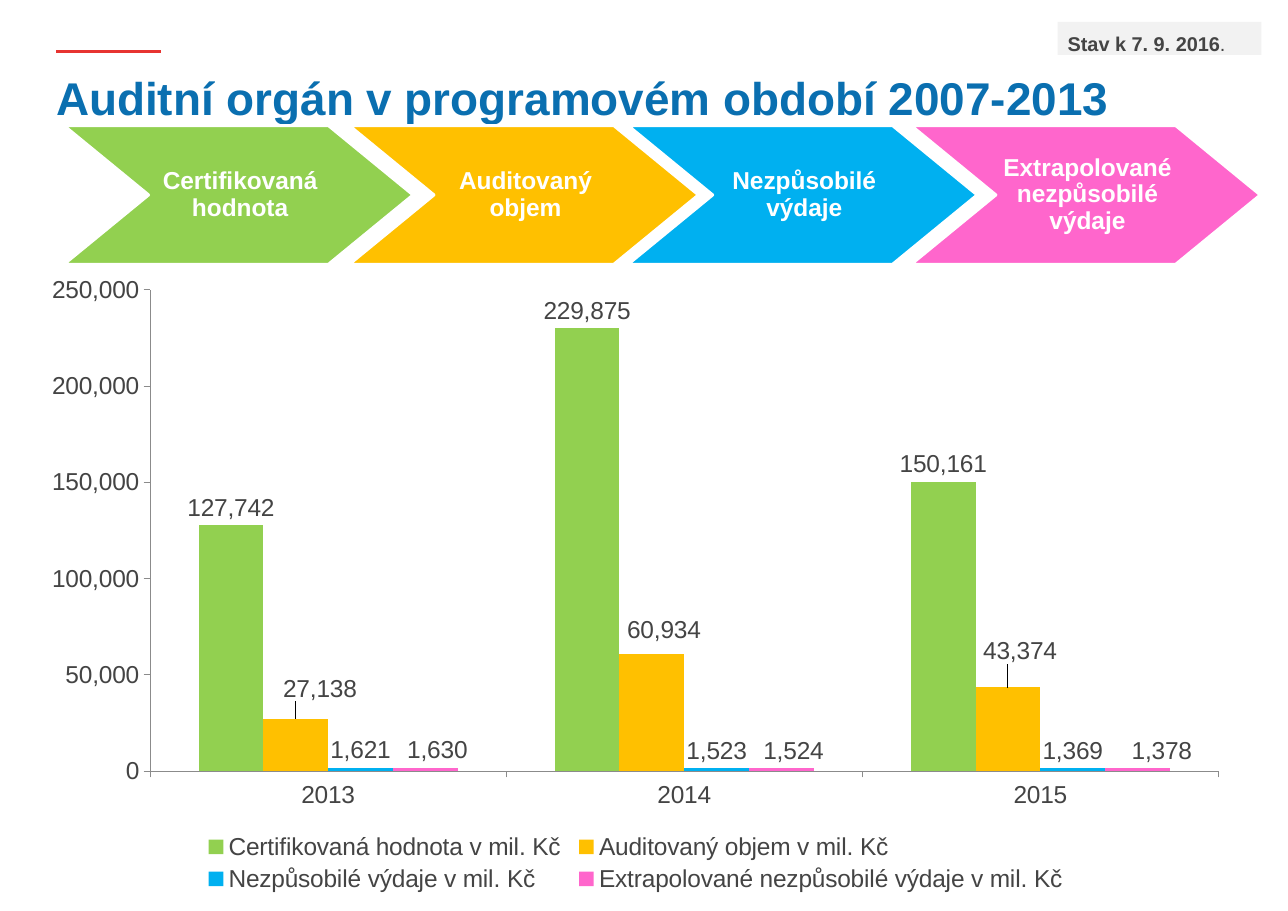
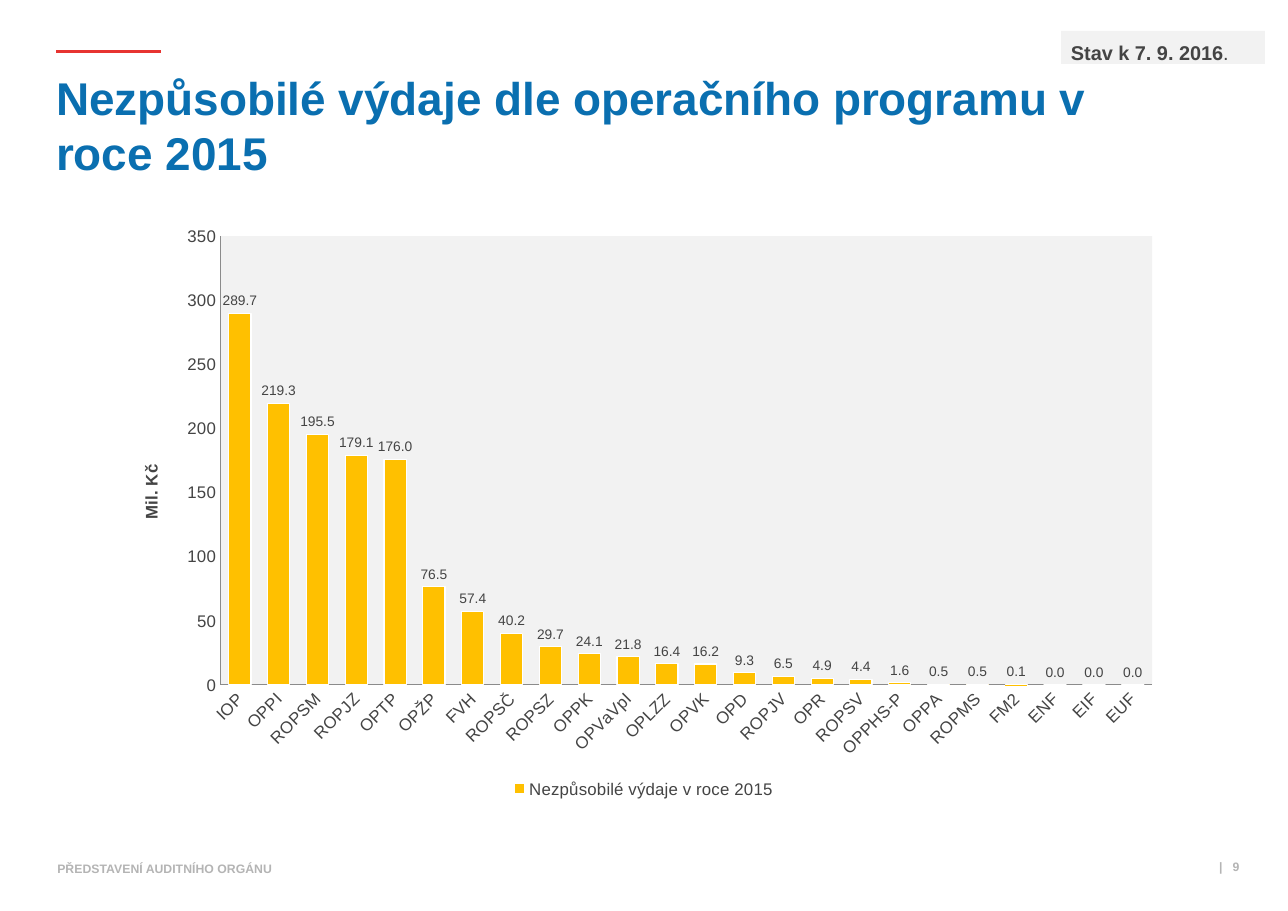
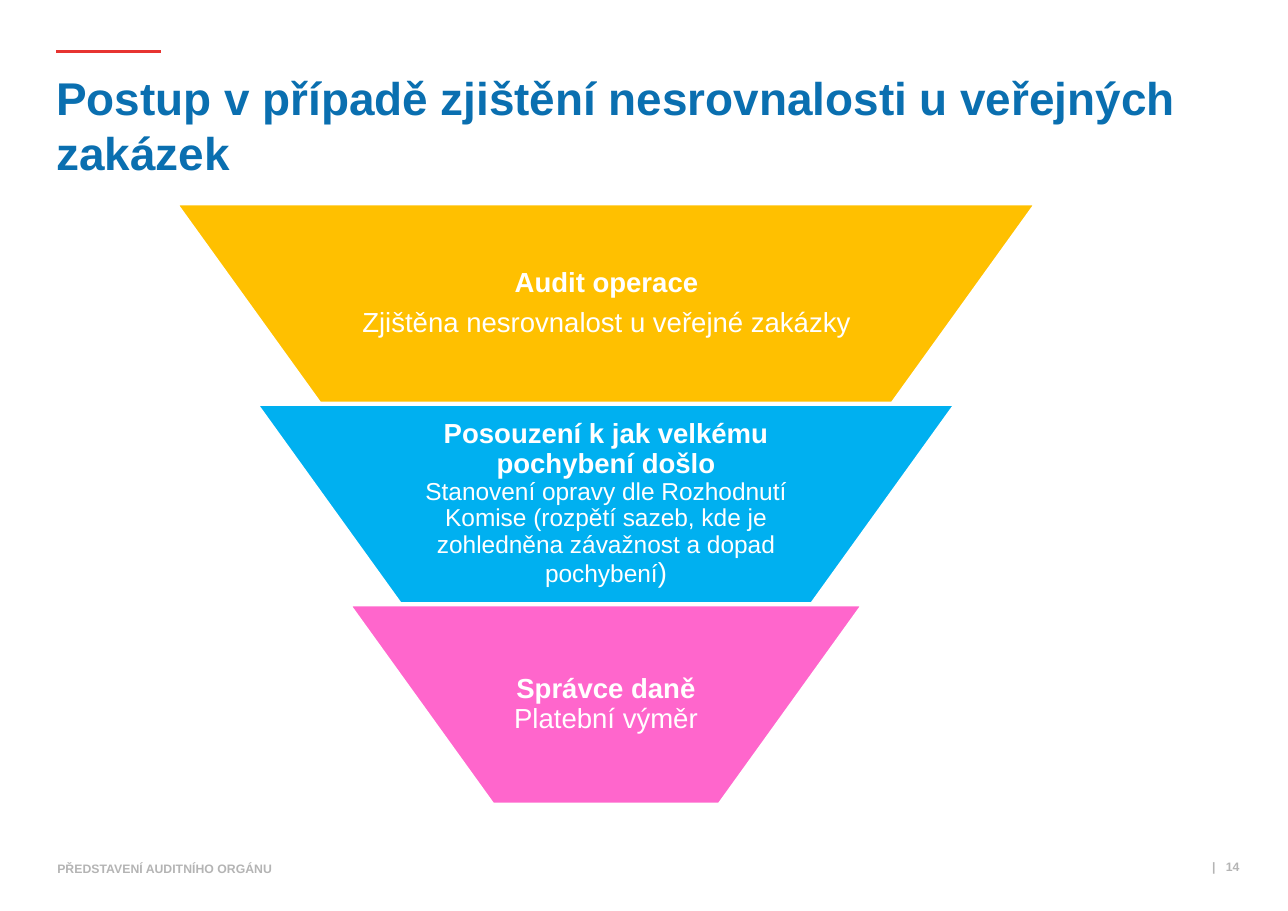
from dataclasses import dataclass
from typing import Any, NamedTuple, Optional

from lxml.etree import SubElement
from pptx import Presentation
from pptx.chart.data import CategoryChartData
from pptx.dml.color import RGBColor
from pptx.enum.chart import XL_CHART_TYPE as ChartType
from pptx.enum.chart import XL_LABEL_POSITION as LabelPosition
from pptx.enum.chart import XL_LEGEND_POSITION as LegendPosition
from pptx.enum.chart import XL_TICK_MARK as TickMark
from pptx.enum.shapes import MSO_CONNECTOR as Connector
from pptx.enum.shapes import MSO_SHAPE as Preset
from pptx.enum.text import MSO_ANCHOR as Anchor
from pptx.enum.text import PP_ALIGN as Align
from pptx.oxml import parse_xml
from pptx.oxml.ns import nsdecls, qn
from pptx.util import Pt

EMU_PER_PX = 9144
FONT = "Arial"
WHITE, TEXT, MUTED, PANEL, AXIS = "FFFFFF", "444444", "B4B4B4", "F2F2F2", "8B8B8B"
TITLE_BLUE, ACCENT_RED = "0A6FB0", "E73431"
GREEN, AMBER, SKY, PINK = "92D050", "FFC000", "00B0F0", "FF66CC"
DIAGRAM_PARAGRAPH = {"alignment": Align.CENTER, "line_spacing": 0.9, "space_after": Pt(7)}
INNER_PLOT = (0.1, 0.04, 0.88, 0.76)
NO_LEADER_LINES = (
    f"<c:extLst {nsdecls('c')}><c:ext uri=\"{{CE6537A1-D6FC-4f65-9D91-7224C49458BB}}\" "
    "xmlns:c15=\"http://schemas.microsoft.com/office/drawing/2012/chart\">"
    "<c15:showLeaderLines val=\"0\"/></c:ext></c:extLst>")


class Box(NamedTuple):
    left: int
    top: int
    width: int
    height: int


class Run(NamedTuple):
    text: str
    size: int
    color: str = WHITE
    bold: bool = False
    spacing: int = 0


class Step(NamedTuple):
    left: int
    label: str
    color: str


class Stage(NamedTuple):
    width: int
    text_width: int
    color: str
    paragraphs: list


class Measure(NamedTuple):
    name: str
    values: tuple
    color: str
    label_shifts: tuple = ()


@dataclass
class ColumnChart:
    box: Box
    categories: tuple
    measures: list
    size: int
    label_size: int
    label_format: str
    gap: int
    maximum: int
    step: int
    tick: Any
    legend_layout: Optional[tuple] = None
    axis_title: str = ""
    label_angle: int = 0
    plot_fill: str = ""
    outline: str = ""


def px(length: int) -> int:
    return length * EMU_PER_PX


def rgb(color: str) -> RGBColor:
    return RGBColor.from_string(color)


def apply(target: Any, values: dict) -> None:
    for name, value in values.items():
        setattr(target, name, value)


def style_font(font: Any, size: int, color: str, bold: bool = False) -> None:
    apply(font, {"name": FONT, "size": Pt(size), "bold": bold})
    font.color.rgb = rgb(color)


def set_line(line: Any, color: str, width: float) -> None:
    line.color.rgb = rgb(color)
    line.width = Pt(width)


def write(frame: Any, paragraphs: list, style: dict, anchor: Any = Anchor.TOP,
          margin: int = 0) -> None:
    apply(frame, {"word_wrap": True, "vertical_anchor": anchor})
    apply(frame, {f"margin_{side}": px(margin) for side in ("left", "top", "right", "bottom")})
    for index, runs in enumerate(paragraphs):
        paragraph = frame.add_paragraph() if index else frame.paragraphs[0]
        apply(paragraph, style)
        for part in runs:
            run = paragraph.add_run()
            run.text = part.text.rstrip("\n")
            style_font(run.font, part.size, part.color, part.bold)
            if part.spacing:
                run._r.get_or_add_rPr().set("spc", str(part.spacing))
            if part.text.endswith("\n"):
                paragraph.add_line_break()


def add_text(slide: Any, box: Box, paragraphs: list, style: dict,
             anchor: Any = Anchor.TOP, margin: int = 0) -> None:
    frame = slide.shapes.add_textbox(*map(px, box)).text_frame
    write(frame, paragraphs, style, anchor, margin)


def add_figure(slide: Any, preset: Any, box: Box, color: str, outline: str = "") -> Any:
    figure = slide.shapes.add_shape(preset, *map(px, box))
    figure.shadow.inherit = False
    figure.fill.solid()
    figure.fill.fore_color.rgb = rgb(color)
    if outline:
        set_line(figure.line, outline, 2)
    else:
        figure.line.fill.background()
    return figure


def add_titled_slide(deck: Any, title: str, title_width: int, title_height: int,
                     page: str = "") -> Any:
    slide = deck.slides.add_slide(deck.slide_layouts[6])
    rule = slide.shapes.add_connector(Connector.STRAIGHT, px(51), px(47), px(146), px(47))
    set_line(rule.line, ACCENT_RED, 2)
    SubElement(rule._element.spPr, qn("a:effectLst"))
    add_text(slide, Box(51, 63, title_width, title_height),
             [[Run(title, 30, TITLE_BLUE, True)]], {"line_spacing": 1.0})
    if page:
        add_text(slide, Box(52, 782, 415, 13),
                 [[Run("PŘEDSTAVENÍ AUDITNÍHO ORGÁNU", 8, MUTED, True)]], {}, Anchor.MIDDLE)
        add_text(slide, Box(952, 780, 173, 13),
                 [[Run("| ", 8, MUTED, True, 220), Run(page, 8, MUTED, True)]],
                 {"alignment": Align.RIGHT}, Anchor.MIDDLE)
    return slide


def add_status(slide: Any, left: int, top: int) -> None:
    status = add_figure(slide, Preset.RECTANGLE, Box(left, top, 185, 30), PANEL)
    write(status.text_frame, [[Run("Stav k 7. 9. 2016", 13, TEXT, True), Run(".", 13, TEXT)]],
          {"alignment": Align.LEFT}, margin=9)


def set_layout(parent: Any, index: int, values: dict) -> None:
    for old in parent.findall(qn("c:layout")):
        parent.remove(old)
    layout = parse_xml(f"<c:layout {nsdecls('c')}><c:manualLayout/></c:layout>")
    for name, value in values.items():
        SubElement(layout[0], qn(f"c:{name}")).set("val", str(value))
    parent.insert(index, layout)


def fixed_area(area: tuple) -> dict:
    return {"xMode": "edge", "yMode": "edge", **dict(zip("xywh", area))}


def style_series(series: Any, measure: Measure, spec: ColumnChart) -> None:
    series.invert_if_negative = False
    series.format.fill.solid()
    series.format.fill.fore_color.rgb = rgb(measure.color)
    if spec.outline:
        set_line(series.format.line, spec.outline, 0.75)
    labels = series.data_labels
    apply(labels, {"show_value": True, "number_format": spec.label_format,
                   "number_format_is_linked": False, "position": LabelPosition.OUTSIDE_END})
    style_font(labels.font, spec.label_size, TEXT)
    for index in range(len(measure.label_shifts)):
        series.points[index].data_label.position = LabelPosition.OUTSIDE_END
    shifted = labels._element.findall(qn("c:dLbl"))
    for label, shift in zip(shifted, measure.label_shifts):
        set_layout(label, 1, dict(zip("xy", shift)))
    labels._element.append(parse_xml(NO_LEADER_LINES))


def style_axes(chart: Any, spec: ColumnChart) -> None:
    apply(chart.value_axis, {"minimum_scale": 0, "maximum_scale": spec.maximum,
                             "major_unit": spec.step})
    apply(chart.value_axis.tick_labels, {"number_format": "#,##0",
                                         "number_format_is_linked": False})
    for axis in (chart.category_axis, chart.value_axis):
        apply(axis, {"has_major_gridlines": False, "major_tick_mark": spec.tick,
                     "minor_tick_mark": TickMark.NONE})
        set_line(axis.format.line, AXIS, 0.5)
        style_font(axis.tick_labels.font, spec.size, TEXT)
    if spec.label_angle:
        body = chart.category_axis._element.find(f"{qn('c:txPr')}/{qn('a:bodyPr')}")
        body.set("rot", str(spec.label_angle * 60000))
    if spec.axis_title:
        frame = chart.value_axis.axis_title.text_frame
        frame.text = spec.axis_title
        style_font(frame.paragraphs[0].runs[0].font, spec.size, TEXT, True)
        for name, value in {"rot": "-5400000", "vert": "horz"}.items():
            frame._txBody.bodyPr.set(name, value)


def add_column_chart(slide: Any, spec: ColumnChart) -> None:
    data = CategoryChartData(number_format=spec.label_format)
    data.categories = spec.categories
    for measure in spec.measures:
        data.add_series(measure.name, measure.values)
    chart = slide.shapes.add_chart(ChartType.COLUMN_CLUSTERED, *map(px, spec.box), data).chart
    apply(chart, {"has_title": False, "has_legend": True})
    style_font(chart.font, spec.size, TEXT)
    apply(chart.legend, {"position": LegendPosition.BOTTOM, "include_in_layout": False})
    style_font(chart.legend.font, spec.size, TEXT)
    if spec.legend_layout:
        set_layout(chart.legend._element, 1, fixed_area(spec.legend_layout))
    plot = chart.plots[0]
    apply(plot, {"gap_width": spec.gap, "overlap": 0, "vary_by_categories": False})
    for series, measure in zip(plot.series, spec.measures):
        style_series(series, measure, spec)
    style_axes(chart, spec)
    area = chart._chartSpace.chart.plotArea
    set_layout(area, 0, {"layoutTarget": "inner", **fixed_area(INNER_PLOT)})
    if spec.plot_fill:
        area.append(parse_xml(
            f"<c:spPr {nsdecls('c', 'a')}><a:solidFill>"
            f"<a:srgbClr val=\"{spec.plot_fill}\"/></a:solidFill></c:spPr>"))


def add_step(slide: Any, step: Step) -> None:
    chevron = add_figure(slide, Preset.CHEVRON, Box(step.left, 114, 317, 126), step.color, WHITE)
    chevron.adjustments[0] = 0.61
    write(chevron.text_frame, [[Run(step.label, 16, bold=True)]], DIAGRAM_PARAGRAPH, Anchor.MIDDLE)
    chevron.text_frame.margin_left = px(3)


def add_stage(slide: Any, index: int, stage: Stage) -> None:
    center, top, height = 550, 185 + 182 * index, 181
    funnel = add_figure(slide, Preset.TRAPEZOID,
                        Box(center - stage.width // 2, top, stage.width, height),
                        stage.color, WHITE)
    funnel.adjustments[0] = 0.72
    funnel.rotation = 180
    add_text(slide, Box(center - stage.text_width // 2, top, stage.text_width, height),
             stage.paragraphs, DIAGRAM_PARAGRAPH, Anchor.MIDDLE, 3)


STEPS = [
    Step(58, "Certifikovaná hodnota", GREEN),
    Step(317, "Auditovaný objem", AMBER),
    Step(570, "Nezpůsobilé výdaje", SKY),
    Step(827, "Extrapolované nezpůsobilé výdaje", PINK),
]

AUDIT_VOLUMES = ColumnChart(
    box=Box(26, 240, 1102, 575),
    categories=("2013", "2014", "2015"),
    measures=[
        Measure("Certifikovaná hodnota v mil. Kč", (127742, 229875, 150161), GREEN),
        Measure("Auditovaný objem v mil. Kč", (27138, 60934, 43374), AMBER,
                ((0.02, -0.02), (0.01, -0.01), (0.01, -0.03))),
        Measure("Nezpůsobilé výdaje v mil. Kč", (1621, 1523, 1369), SKY),
        Measure("Extrapolované nezpůsobilé výdaje v mil. Kč", (1630, 1524, 1378), PINK,
                ((0.01, 0), (0.01, 0), (0.02, 0))),
    ],
    size=16, label_size=16, label_format="#,##0", gap=150, maximum=250000, step=50000,
    tick=TickMark.OUTSIDE, legend_layout=(0.14, 0.89, 0.72, 0.11),
)

PROGRAMME_EXPENSES = ColumnChart(
    box=Box(104, 193, 961, 536),
    categories=("IOP", "OPPI", "ROPSM", "ROPJZ", "OPTP", "OPŽP", "FVH", "ROPSČ", "ROPSZ",
                "OPPK", "OPVaVpI", "OPLZZ", "OPVK", "OPD", "ROPJV", "OPR", "ROPSV", "OPPHS-P",
                "OPPA", "ROPMS", "FM2", "ENF", "EIF", "EUF"),
    measures=[Measure(
        "Nezpůsobilé výdaje v roce 2015",
        (289.7, 219.3, 195.5, 179.1, 176, 76.5, 57.4, 40.2, 29.7, 24.1, 21.8, 16.4, 16.2,
         9.3, 6.5, 4.9, 4.4, 1.6, 0.5, 0.5, 0.1, 0, 0, 0), AMBER)],
    size=11, label_size=9, label_format="#,##0.0", gap=75, maximum=350, step=50,
    tick=TickMark.NONE, axis_title="Mil. Kč", label_angle=-45, plot_fill=PANEL, outline=WHITE,
)

STAGES = [
    Stage(780, 507, AMBER, [
        [Run("Audit operace", 18, bold=True)],
        [Run("Zjištěna nesrovnalost u veřejné zakázky", 18)],
    ]),
    Stage(634, 412, SKY, [[
        Run("Posouzení k jak velkému pochybení došlo\n", 18, bold=True),
        Run("Stanovení opravy dle Rozhodnutí Komise (rozpětí sazeb, kde je "
            "zohledněna závažnost a dopad pochybení", 16),
        Run(")", 18),
    ]]),
    Stage(466, 466, PINK, [[
        Run("Správce daně\n", 18, bold=True), Run("Platební výměr", 18),
    ]]),
]


def main() -> None:
    deck = Presentation()
    apply(deck, {"slide_width": px(1169), "slide_height": px(827)})

    overview = add_titled_slide(deck, "Auditní orgán v programovém období 2007-2013", 983, 51)
    for step in STEPS:
        add_step(overview, step)
    add_column_chart(overview, AUDIT_VOLUMES)
    add_status(overview, 960, 20)

    programmes = add_titled_slide(
        deck, "Nezpůsobilé výdaje dle operačního programu v roce 2015", 983, 101, "9")
    add_column_chart(programmes, PROGRAMME_EXPENSES)
    add_status(programmes, 963, 28)

    procedure = add_titled_slide(
        deck, "Postup v případě zjištění nesrovnalosti u veřejných zakázek", 1100, 101, "14")
    for index, stage in enumerate(STAGES):
        add_stage(procedure, index, stage)

    deck.save("out.pptx")


if __name__ == "__main__":
    main()
